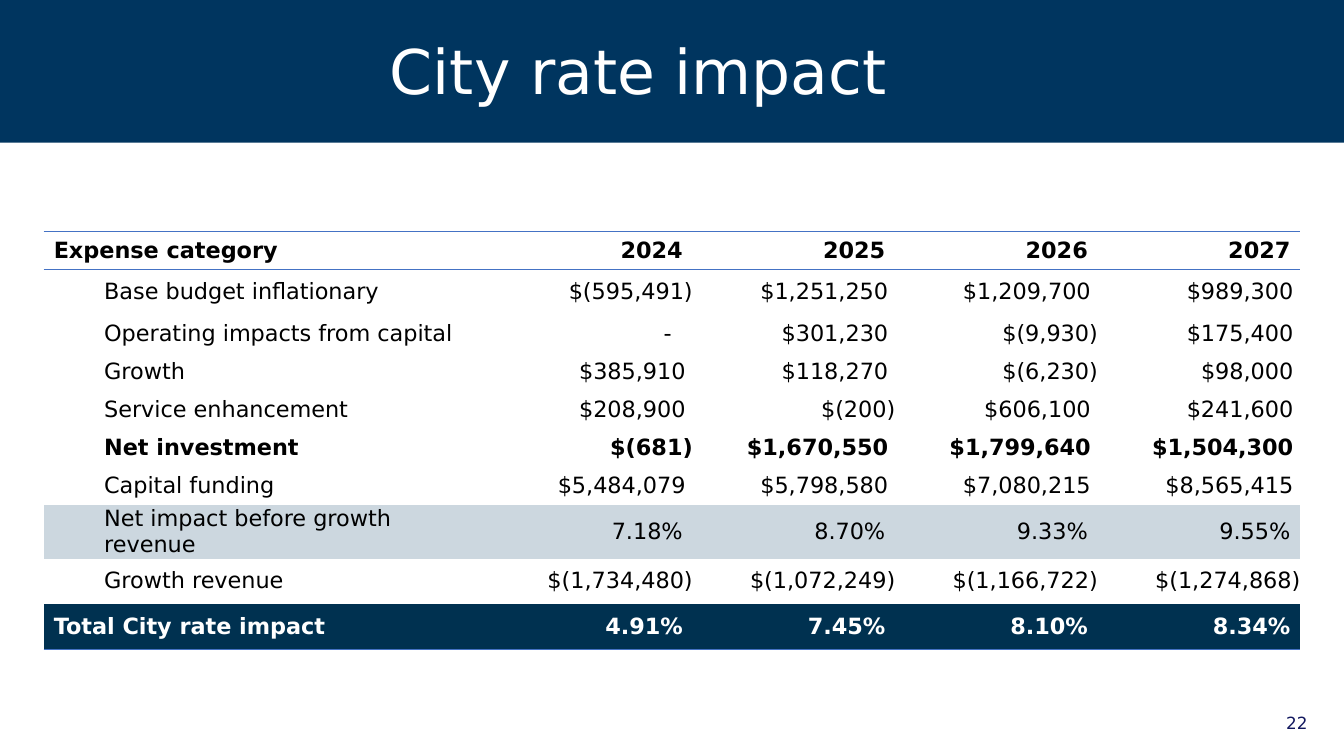
from lxml import etree
from pptx import Presentation
from pptx.dml.color import RGBColor
from pptx.enum.shapes import MSO_SHAPE
from pptx.enum.text import MSO_ANCHOR, PP_ALIGN
from pptx.oxml.ns import qn
from pptx.util import Pt

RECTANGLE = MSO_SHAPE.RECTANGLE
TOP, MIDDLE = MSO_ANCHOR.TOP, MSO_ANCHOR.MIDDLE
LEFT, RIGHT = PP_ALIGN.LEFT, PP_ALIGN.RIGHT

FONT = "DejaVu Sans"
COLORS = {
    "band": "00355F",
    "total": "003150",
    "subtotal": "CCD7DF",
    "rule": "4472C4",
    "number": "11175E",
    "black": "000000",
    "white": "FFFFFF",
}
NO_GRID_STYLE = "{2D5ABB26-0587-4C30-8999-92F81FD0307C}"

TITLE = "City rate impact"
PAGE_NUMBER = "22"
ROWS = [
    ("header", 26.64, ["Expense category", "2024", "2025", "2026", "2027"]),
    ("item", 32.4, ["Base budget inflationary", "$(595,491)", "$1,251,250", "$1,209,700", "$989,300"]),
    ("item", 27.2, ["Operating impacts from capital", "-", "$301,230", "$(9,930)", "$175,400"]),
    ("item", 27.2, ["Growth", "$385,910", "$118,270", "$(6,230)", "$98,000"]),
    ("item", 27.2, ["Service enhancement", "$208,900", "$(200)", "$606,100", "$241,600"]),
    ("net", 27.2, ["Net investment", "$(681)", "$1,670,550", "$1,799,640", "$1,504,300"]),
    ("item", 27.2, ["Capital funding", "$5,484,079", "$5,798,580", "$7,080,215", "$8,565,415"]),
    ("subtotal", 32.4, ["Net impact before growth revenue", "7.18%", "8.70%", "9.33%", "9.55%"]),
    ("item", 32.4, ["Growth revenue", "$(1,734,480)", "$(1,072,249)", "$(1,166,722)", "$(1,274,868)"]),
    ("total", 32.4, ["Total City rate impact", "4.91%", "7.45%", "8.10%", "8.34%"]),
]
COLUMN_WIDTHS = [319, 144.7, 144.7, 144.7, 144.7]
BORDERS = {"header": ["a:lnT", "a:lnB"], "total": ["a:lnB"]}
BOLD_KINDS = {"header", "net", "total"}
FLUSH_KINDS = {"header", "total"}
CELL_MARGIN = 7.2
LABEL_INDENT = 36
RIGHT_GAPS = {")": 0, "-": 15.2, "%": CELL_MARGIN}
DIGIT_GAP = 5.1


def write(frame, text, size=16, color="black", bold=False, align=LEFT, spacing=None):
    frame.word_wrap = True
    para = frame.paragraphs[0]
    para.alignment = align
    if spacing:
        para.line_spacing = spacing
    span = para.add_run()
    span.text = text
    span.font.name = FONT
    span.font.size = Pt(size)
    span.font.bold = bold
    span.font.color.rgb = RGBColor.from_string(COLORS[color])
    return para


def add_text(page, text, left, top, width, height, anchor, **style):
    box = page.shapes.add_textbox(Pt(left), Pt(top), Pt(width), Pt(height))
    box.text_frame.vertical_anchor = anchor
    write(box.text_frame, text, **style)


def add_border(cell, side):
    line = etree.SubElement(cell._tc.get_or_add_tcPr(), qn(side), w=str(Pt(1)))
    fill = etree.SubElement(line, qn("a:solidFill"))
    etree.SubElement(fill, qn("a:srgbClr"), val=COLORS["rule"])


def fill_cell(cell, kind, column, text):
    for side in BORDERS.get(kind, []):
        add_border(cell, side)
    if kind in ("subtotal", "total"):
        cell.fill.solid()
        cell.fill.fore_color.rgb = RGBColor.from_string(COLORS[kind])
    else:
        cell.fill.background()

    cell.vertical_anchor = MIDDLE
    if kind != "header":
        cell.margin_top = cell.margin_bottom = 0
        if column > 0:
            cell.margin_right = Pt(RIGHT_GAPS.get(text[-1], DIGIT_GAP))
            if not text.endswith("%"):
                cell.margin_left = 0

    para = write(
        cell.text_frame,
        text,
        color="white" if kind == "total" else "black",
        bold=kind in BOLD_KINDS,
        align=RIGHT if column else LEFT,
    )
    if column == 0 and kind not in FLUSH_KINDS:
        para.level = 1
        properties = para._p.get_or_add_pPr()
        properties.set("marL", str(Pt(LABEL_INDENT)))
        properties.set("indent", "0")


def add_rate_table(page):
    heights = [height for _, height, _ in ROWS]
    frame = page.shapes.add_table(
        len(ROWS), len(COLUMN_WIDTHS), Pt(31.2), Pt(165.6), Pt(sum(COLUMN_WIDTHS)), Pt(sum(heights))
    )
    table = frame.table
    table.first_row = table.horz_banding = False
    table._tbl.tblPr.find(qn("a:tableStyleId")).text = NO_GRID_STYLE
    for column, width in enumerate(COLUMN_WIDTHS):
        table.columns[column].width = Pt(width)
    for row, (kind, height, texts) in enumerate(ROWS):
        table.rows[row].height = Pt(height)
        for column, text in enumerate(texts):
            fill_cell(table.cell(row, column), kind, column, text)


def main():
    deck = Presentation()
    deck.slide_width, deck.slide_height = Pt(960), Pt(540)
    page = deck.slides.add_slide(deck.slide_layouts[6])

    band = page.shapes.add_shape(RECTANGLE, 0, 0, deck.slide_width, Pt(102))
    band.shadow.inherit = False
    band.fill.solid()
    band.fill.fore_color.rgb = RGBColor.from_string(COLORS["band"])
    band.line.fill.background()

    add_text(page, PAGE_NUMBER, 887.8, 505.4, 53.3, 28.8, TOP, size=12, color="number", align=RIGHT)
    add_text(page, TITLE, 271.4, 21.6, 640, 63.4, MIDDLE, size=44, color="white", spacing=0.9)
    add_rate_table(page)
    deck.save("out.pptx")


if __name__ == "__main__":
    main()
